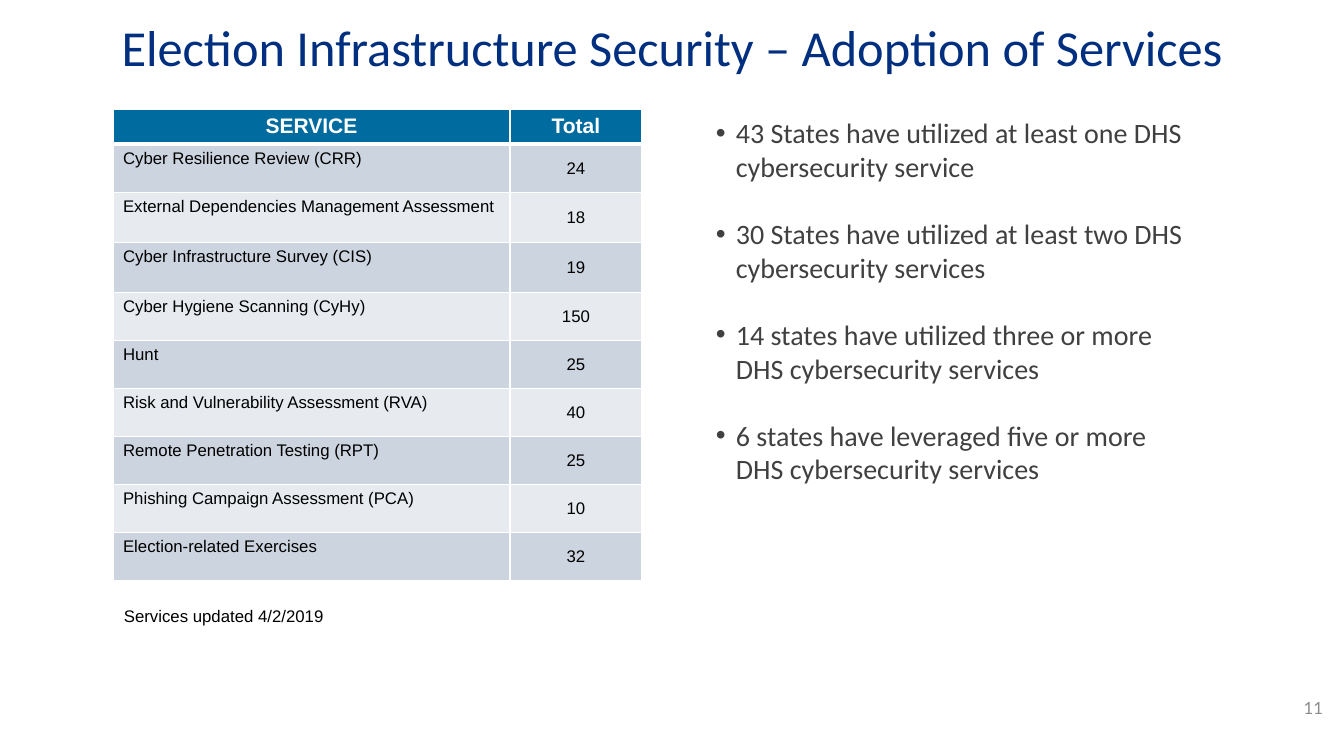
from lxml.etree import SubElement
from pptx import Presentation
from pptx.dml.color import RGBColor
from pptx.enum.text import MSO_ANCHOR as Anchor, PP_ALIGN as Align
from pptx.oxml.ns import qn
from pptx.util import Pt

PX = 914400 / 100.8  # EMU per pixel
COLORS = {
    "title": "002F80", "body": "404040", "number": "8C8C8C", "black": "000000",
    "white": "FFFFFF", "header": "006B9F", "odd": "CCD4DF", "even": "E7EBF0",
}


def write(frame, lines, font, size, color, align=Align.LEFT, bold=False):
    frame.text = "\n".join(lines)
    frame.word_wrap = True
    for paragraph in frame.paragraphs:
        paragraph.alignment = align
        for run in paragraph.runs:
            run.font.name = font
            run.font.size = Pt(size)
            run.font.bold = bold
            run.font.color.rgb = RGBColor.from_string(COLORS[color])
    return frame


def add_text(box, *style, **options):
    frame = slide.shapes.add_textbox(*(round(n * PX) for n in box)).text_frame
    return write(frame, *style, **options)


deck = Presentation()
deck.slide_width, deck.slide_height = round(1344 * PX), round(756 * PX)
slide = deck.slides.add_slide(deck.slide_layouts[6])

# Title
title = add_text((93, 18, 1159, 58), ["Election Infrastructure Security – Adoption of Services"],
                 "Calibri", 36, "title", align=Align.CENTER)
title.paragraphs[0].line_spacing = 0.9

# Adoption bullets
adoption = add_text((686, 111, 524, 401), [
    "43 States have utilized at least one DHS cybersecurity service",
    "30 States have utilized at least two DHS cybersecurity services",
    "14 states have utilized three or more DHS cybersecurity services",
    "6 states have leveraged five or more DHS cybersecurity services",
], "Calibri", 20, "body")
for index, paragraph in enumerate(adoption.paragraphs):
    properties = paragraph._p.get_or_add_pPr()
    properties.set("marL", str(round(40 * PX)))
    properties.set("indent", str(round(-20 * PX)))
    SubElement(properties, qn("a:buFont"), typeface="Arial")
    SubElement(properties, qn("a:buChar"), char="•")
    paragraph.space_before = Pt(12 if index else 0)
    paragraph.space_after = Pt(12)

# Services table
services = [
    ("SERVICE", "Total"),
    ("Cyber Resilience Review (CRR)", "24"),
    ("External Dependencies Management Assessment", "18"),
    ("Cyber Infrastructure Survey (CIS)", "19"),
    ("Cyber Hygiene Scanning (CyHy)", "150"),
    ("Hunt", "25"),
    ("Risk and Vulnerability Assessment (RVA)", "40"),
    ("Remote Penetration Testing (RPT)", "25"),
    ("Phishing Campaign Assessment (PCA)", "10"),
    ("Election-related Exercises", "32"),
]
row_heights = [35, 48, 50, 50] + [48] * 6
column_widths = [397, 132]
table = slide.shapes.add_table(
    len(services), 2, round(113 * PX), round(109 * PX),
    round(sum(column_widths) * PX), round(sum(row_heights) * PX)).table
for column, width in zip(table.columns, column_widths):
    column.width = round(width * PX)
for r, (service, height) in enumerate(zip(services, row_heights)):
    table.rows[r].height = round(height * PX)
    for c, value in enumerate(service):
        cell = table.cell(r, c)
        centered = Align.CENTER if r == 0 or c == 1 else Align.LEFT
        if r == 0:
            write(cell.text_frame, [value], "Arial", 15, "white", centered, bold=True)
        else:
            write(cell.text_frame, [value], "Arial", 12, "black", centered)
        cell.vertical_anchor = Anchor.MIDDLE if r and c else Anchor.TOP
        # White borders, thicker under the header
        for side in ("lnL", "lnR", "lnT", "lnB"):
            thick = (r, side) in ((0, "lnB"), (1, "lnT"))
            border = SubElement(cell._tc.get_or_add_tcPr(), qn(f"a:{side}"),
                                w=str(Pt(3 if thick else 1)))
            SubElement(SubElement(border, qn("a:solidFill")), qn("a:srgbClr"),
                       val=COLORS["white"])
        cell.fill.solid()
        band = "header" if r == 0 else "odd" if r % 2 else "even"
        cell.fill.fore_color.rgb = RGBColor.from_string(COLORS[band])

# Update note and slide number
add_text((114, 601, 504, 30), ["Services updated 4/2/2019"], "Arial", 12, "black")
number = add_text((1293, 688, 40, 40), ["11"], "Lato", 12, "number", align=Align.RIGHT)
number.vertical_anchor = Anchor.MIDDLE

deck.save("out.pptx")
